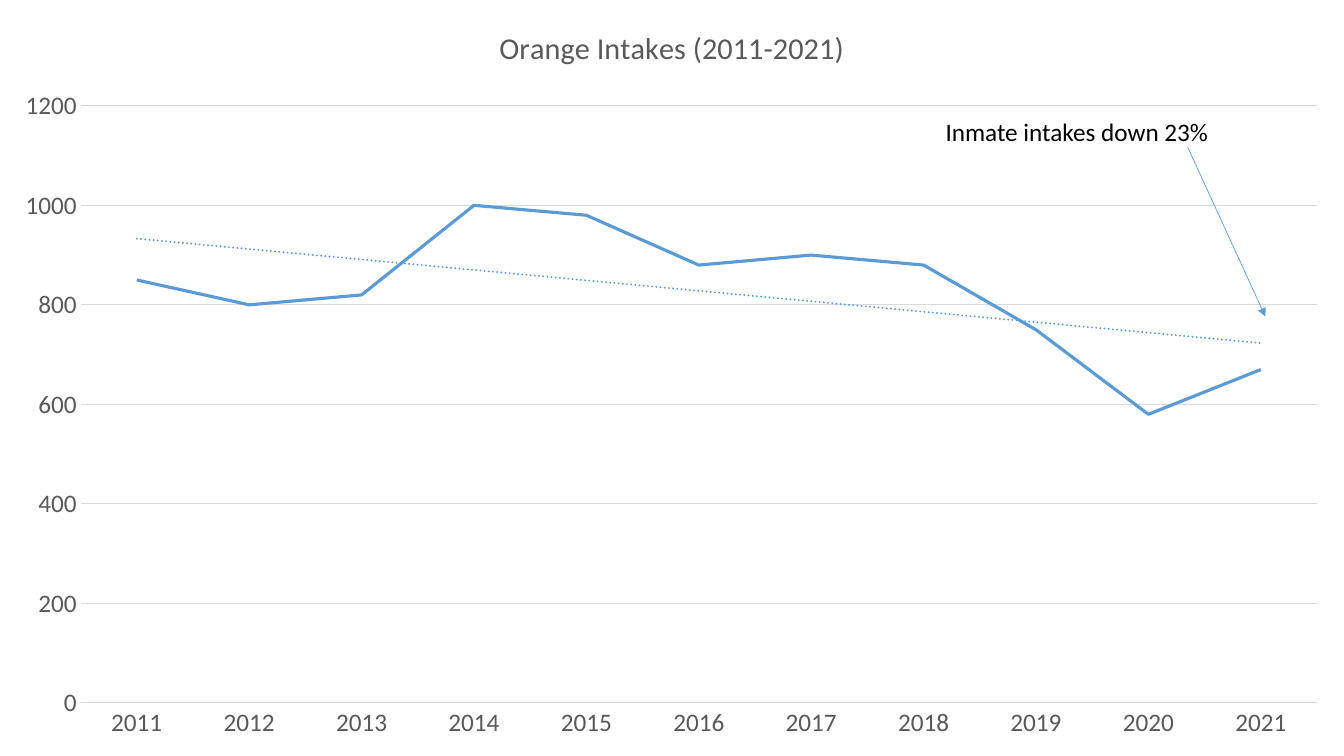
from lxml.etree import SubElement
from pptx import Presentation
from pptx.chart.data import CategoryChartData
from pptx.dml.color import RGBColor
from pptx.enum.chart import XL_CHART_TYPE, XL_MARKER_STYLE, XL_TICK_MARK
from pptx.enum.shapes import MSO_CONNECTOR
from pptx.enum.text import MSO_AUTO_SIZE
from pptx.oxml import parse_xml
from pptx.oxml.ns import nsdecls, qn
from pptx.util import Inches, Pt

BLUE = RGBColor(0x5B, 0x9B, 0xD5)
GRAY = RGBColor(0x59, 0x59, 0x59)
PALE = RGBColor(0xD9, 0xD9, 0xD9)
BLACK = RGBColor(0, 0, 0)
FONT = "Calibri"
WIDE, HIGH = Inches(13.33), Inches(7.5)
YEARS = [str(year) for year in range(2011, 2022)]
INTAKES = [850, 800, 820, 1000, 980, 880, 900, 880, 750, 580, 670]


def style(font, size, color):
    """Set the face, size and color of a font."""
    font.name, font.size, font.bold = FONT, Pt(size), False
    font.color.rgb = color


def stroke(line, color, width):
    """Set the color and width in points of a line."""
    line.color.rgb = color
    line.width = Pt(width)


def add_trend(series):
    """Add a dotted linear trend line to a series."""
    trend = parse_xml(
        f'<c:trendline {nsdecls("c", "a")}><c:spPr><a:ln w="{Pt(1.5)}" cap="rnd">'
        f'<a:solidFill><a:srgbClr val="{BLUE}"/></a:solidFill>'
        '<a:prstDash val="sysDot"/></a:ln></c:spPr>'
        '<c:trendlineType val="linear"/><c:dispRSqr val="0"/>'
        '<c:dispEq val="0"/></c:trendline>')
    series._element.find(qn("c:cat")).addprevious(trend)


def set_plot(chart, left, top, width, height):
    """Place the inner plot area by shares of the chart."""
    area = chart._chartSpace.chart.plotArea
    for old in area.findall(qn("c:layout")):
        area.remove(old)
    layout = parse_xml(f'<c:layout {nsdecls("c")}><c:manualLayout/></c:layout>')
    parts = {"layoutTarget": "inner", "xMode": "edge", "yMode": "edge",
             "x": left, "y": top, "w": width, "h": height}
    for name, value in parts.items():
        SubElement(layout[0], qn(f"c:{name}")).set("val", str(value))
    area.insert(0, layout)


def draw_chart(slide, left, top, width, height):
    """Draw the yearly intakes as a line chart in the given box."""
    data = CategoryChartData()
    data.categories = YEARS
    data.add_series("Series 1", INTAKES)
    chart = slide.shapes.add_chart(
        XL_CHART_TYPE.LINE, left, top, width, height, data).chart
    style(chart.font, 18, BLACK)
    chart.has_legend = False
    chart.has_title = True
    title = chart.chart_title
    title.include_in_layout = False
    title.text_frame.text = "Orange Intakes (2011-2021)"
    style(title.text_frame.paragraphs[0].runs[0].font, 21.6, GRAY)
    for axis in (chart.category_axis, chart.value_axis):
        axis.major_tick_mark = axis.minor_tick_mark = XL_TICK_MARK.NONE
        style(axis.tick_labels.font, 18, GRAY)
    stroke(chart.category_axis.format.line, PALE, 0.75)
    scale = chart.value_axis
    scale.minimum_scale, scale.maximum_scale, scale.major_unit = 0, 1200, 200
    scale.format.line.fill.background()
    stroke(scale.major_gridlines.format.line, PALE, 0.75)
    plot = chart.plots[0]
    plot.vary_by_categories = False
    series = plot.series[0]
    series.smooth = False
    series.marker.style = XL_MARKER_STYLE.NONE
    stroke(series.format.line, BLUE, 2.25)
    add_trend(series)
    set_plot(chart, 0.06, 0.14, 0.92, 0.79)


def draw_note(slide, left, top, width, height):
    """Draw the note at the top of the box and its arrow to the corner."""
    box = slide.shapes.add_textbox(left, top, Inches(2.84), Inches(0.4))
    frame = box.text_frame
    frame.word_wrap = False
    frame.auto_size = MSO_AUTO_SIZE.SHAPE_TO_FIT_TEXT
    frame.text = "Inmate intakes down 23%"
    style(frame.paragraphs[0].runs[0].font, 18, BLACK)
    arrow = slide.shapes.add_connector(
        MSO_CONNECTOR.STRAIGHT, left + Inches(2.5), top + Inches(0.36),
        left + width, top + height)
    stroke(arrow.line, BLUE, 0.5)
    SubElement(arrow.line._get_or_add_ln(), qn("a:tailEnd")).set("type", "triangle")
    SubElement(arrow._element.spPr, qn("a:effectLst"))


def main():
    """Build the slide and save it."""
    deck = Presentation()
    deck.slide_width, deck.slide_height = WIDE, HIGH
    slide = deck.slides.add_slide(deck.slide_layouts[6])
    draw_chart(slide, 0, 0, WIDE, HIGH)
    draw_note(slide, Inches(9.28), Inches(1.1), Inches(3.27), Inches(2.04))
    deck.save("out.pptx")


if __name__ == "__main__":
    main()
